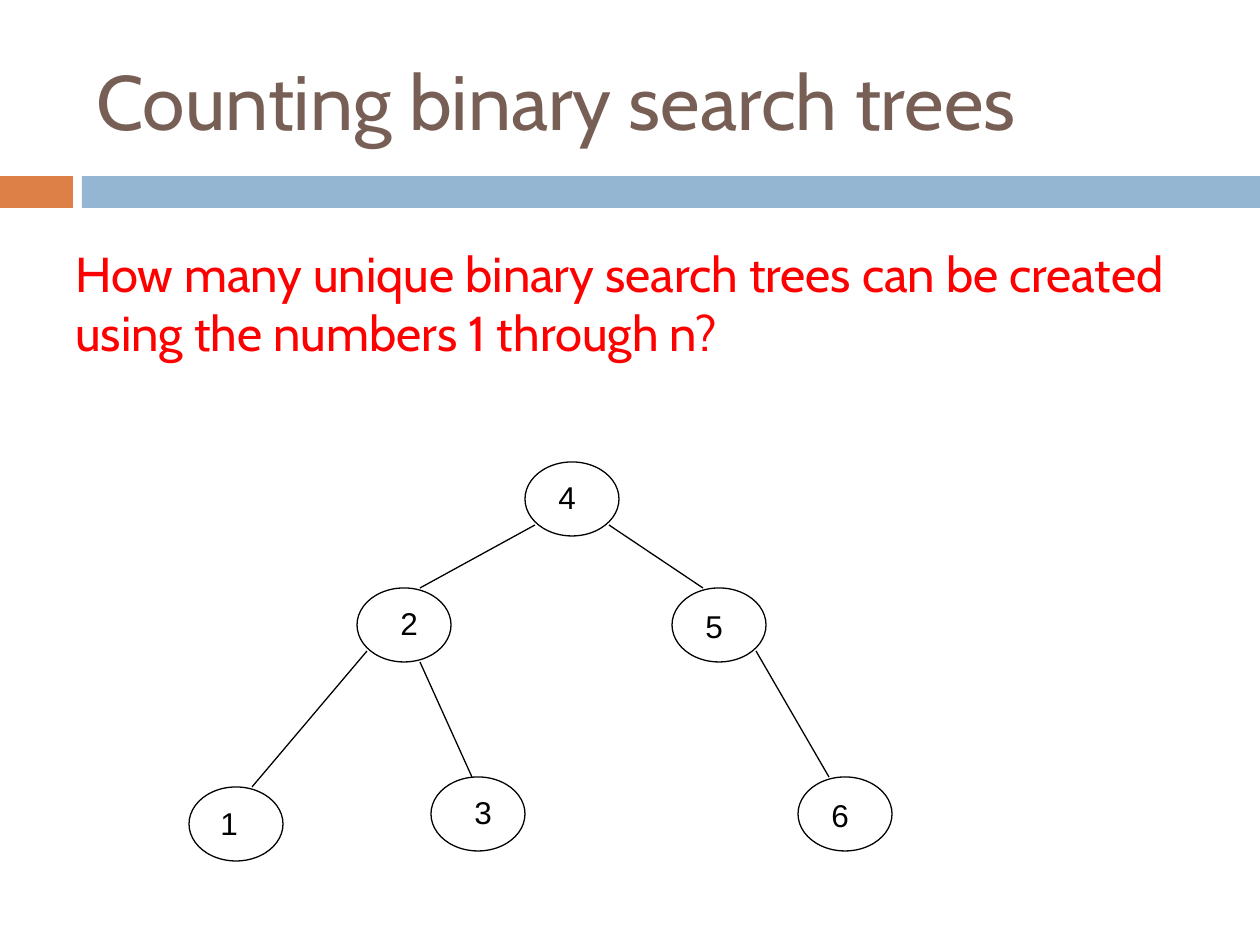
import pptx
import pptx.dml.color
import pptx.enum.shapes
import pptx.enum.text
import pptx.oxml.ns
import pptx.util
import lxml.etree

PX = 914400 / 126
SHAPES = pptx.enum.shapes.MSO_SHAPE
ANCHORS = pptx.enum.text.MSO_ANCHOR
COLORS = {
    "title": "775F55",
    "question": "FF0000",
    "ink": "000000",
    "accent": "DD8047",
    "band": "94B6D2",
}
NODE_WIDTH, NODE_HEIGHT = 94, 74
# number: (oval left, oval top, label left, label top)
NODES = {
    "4": (525, 462, 546, 472),
    "2": (357, 588, 388, 598),
    "1": (189, 787, 208, 798),
    "3": (431, 777, 462, 787),
    "5": (672, 588, 693, 601),
    "6": (798, 777, 819, 790),
}
EDGES = [
    (535, 525, 420, 588),
    (609, 525, 703, 588),
    (367, 651, 252, 787),
    (420, 662, 472, 777),
    (756, 651, 829, 777),
]


def px(*lengths):
    return [pptx.util.Emu(round(length * PX)) for length in lengths]


def rgb(name):
    return pptx.dml.color.RGBColor.from_string(COLORS[name])


def write(shape, text, *, size, color, font="Cabin", anchor=ANCHORS.TOP, before=0):
    frame = shape.text_frame
    frame.word_wrap = True
    frame.auto_size = pptx.enum.text.MSO_AUTO_SIZE.NONE
    frame.vertical_anchor = anchor
    para = frame.paragraphs[0]
    para.alignment = pptx.enum.text.PP_ALIGN.LEFT
    para.space_before = pptx.util.Pt(before)
    span = para.add_run()
    span.text = text
    span.font.name = font
    span.font.size = pptx.util.Pt(size)
    span.font.color.rgb = rgb(color)


def add_title(page, text):
    title = page.shapes.title
    title.left, title.top, title.width, title.height = px(84, 32, 1124, 136)
    write(title, text, size=44, color="title", anchor=ANCHORS.MIDDLE)


def add_text(page, text, area, **style):
    write(page.shapes.add_textbox(*px(*area)), text, **style)


def add_bar(page, area, color):
    bar = page.shapes.add_shape(SHAPES.RECTANGLE, *px(*area))
    bar.shadow.inherit = False
    bar.fill.solid()
    bar.fill.fore_color.rgb = rgb(color)
    bar.line.fill.background()


def draw_line(line):
    line.color.rgb = rgb("ink")
    line.width = pptx.util.Pt(0.75)


def add_node(page, number, left, top, label_left, label_top):
    add_text(page, number, (label_left, label_top, 84, 50),
             size=18, color="ink", font="Arial")
    oval = page.shapes.add_shape(
        SHAPES.OVAL, *px(left, top, NODE_WIDTH, NODE_HEIGHT))
    oval.shadow.inherit = False
    oval.fill.background()
    draw_line(oval.line)


def add_edge(page, ends):
    edge = page.shapes.add_connector(
        pptx.enum.shapes.MSO_CONNECTOR.STRAIGHT, *px(*ends))
    draw_line(edge.line)
    lxml.etree.SubElement(edge.element.spPr, pptx.oxml.ns.qn("a:effectLst"))


def main():
    deck = pptx.Presentation()
    deck.slide_width, deck.slide_height = px(1260, 945)
    page = deck.slides.add_slide(deck.slide_layouts.get_by_name("Title Only"))

    add_bar(page, (0, 176, 73, 32), "accent")
    add_bar(page, (82, 176, 1178, 32), "band")
    add_title(page, "Counting binary search trees")
    add_text(page, "How many unique binary search trees can be created "
             "using the numbers 1 through n?", (63, 237, 1134, 173),
             size=28, color="question", before=7)
    for number, places in NODES.items():
        add_node(page, number, *places)
    for ends in EDGES:
        add_edge(page, ends)

    deck.save("out.pptx")


if __name__ == "__main__":
    main()
